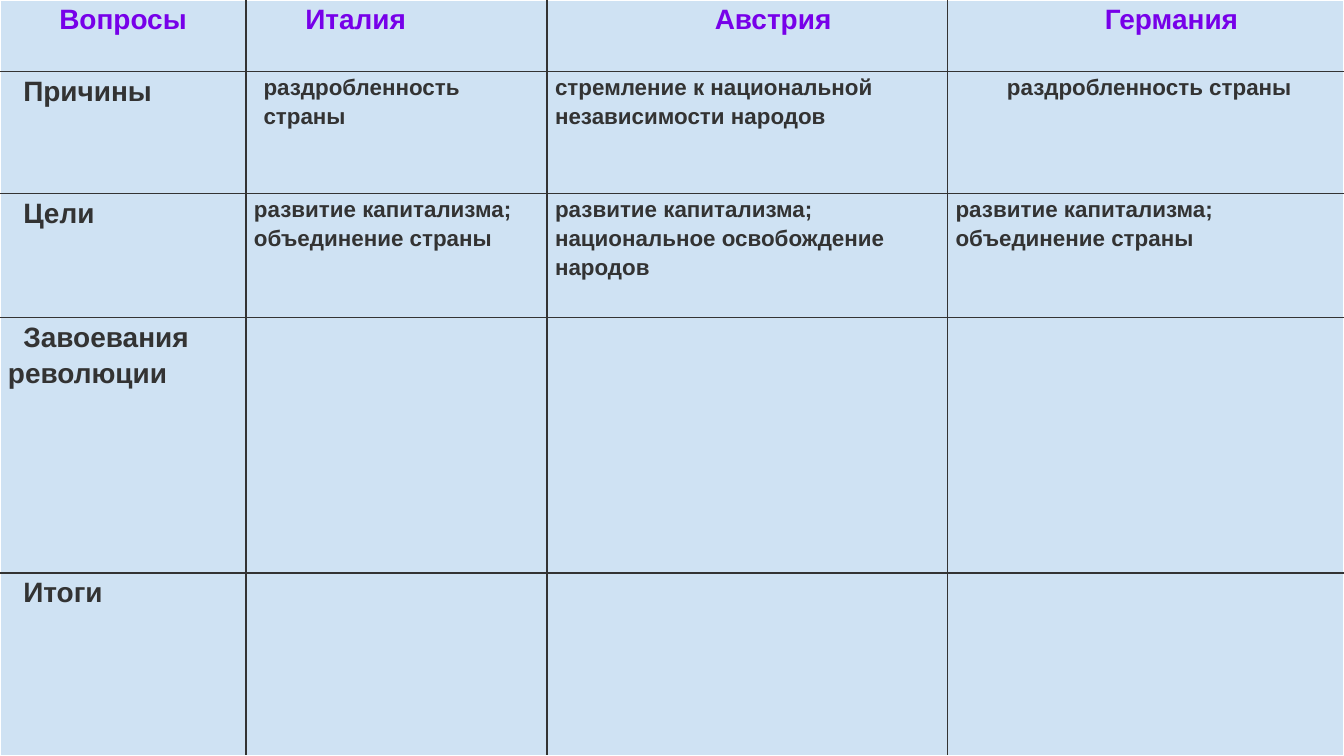
from lxml import etree
from pptx import Presentation
from pptx.dml.color import RGBColor
from pptx.enum.text import PP_ALIGN
from pptx.oxml.ns import qn
from pptx.util import Cm, Pt

LEFT, CENTER = PP_ALIGN.LEFT, PP_ALIGN.CENTER

THEME = {
    "font": "Arial", "heading_size": 15, "body_size": 12, "spacing": 1.15,
    "heading": "7700E9", "text": "333333", "fill": "CFE2F3",
    "inner_line": "333333", "outer_line": "FFFFFF", "line_width": 1,
}
SLIDE_SIZE = (25.4, 14.29)
COLUMN_WIDTHS = (4.65, 5.69, 7.57, 7.49)
ROW_HEIGHTS = (1.35, 2.31, 2.34, 4.83, 3.46)
SIDE_INSET = 0.15
LABEL_INDENT = 0.29

COUNTRIES = [
    ("Вопросы", {"align": CENTER}),
    ("Италия", {"margin": 0.97}),
    ("Австрия", {"align": CENTER, "margin": 0.97}),
    ("Германия", {"align": CENTER, "margin": 0.97}),
]
QUESTIONS = ["Причины", "Цели", "Завоевания революции", "Итоги"]
ANSWERS = [
    [
        (["раздробленность страны"], {"margin": 0.18}),
        (["стремление к национальной независимости народов"], {}),
        (["раздробленность страны"], {"margin": 0.97}),
    ],
    [
        (["развитие капитализма;", "объединение страны"], {}),
        (["развитие капитализма;", "национальное освобождение народов"], {}),
        (["развитие капитализма;", "объединение страны"], {}),
    ],
]


def write(cell, lines, size=THEME["body_size"], color=THEME["text"],
          align=LEFT, margin=0, indent=0):
    """Fill a cell with bold paragraphs in the given format."""
    frame = cell.text_frame
    for index, line in enumerate(lines):
        para = frame.add_paragraph() if index else frame.paragraphs[0]
        properties = para._p.get_or_add_pPr()
        properties.set("marL", str(Cm(margin)))
        properties.set("indent", str(Cm(indent)))
        para.alignment = align
        para.line_spacing = THEME["spacing"]
        span = para.add_run()
        span.text = line
        span.font.name = THEME["font"]
        span.font.size = Pt(size)
        span.font.bold = True
        span.font.color.rgb = RGBColor.from_string(color)


def set_borders(cell, outer_sides):
    """Draw the four borders of a cell, light where they face outwards."""
    properties = cell._tc.get_or_add_tcPr()
    for index, side in enumerate("LRTB"):
        color = THEME["outer_line" if side in outer_sides else "inner_line"]
        line = etree.Element(qn(f"a:ln{side}"), w=str(Pt(THEME["line_width"])))
        fill = etree.SubElement(line, qn("a:solidFill"))
        etree.SubElement(fill, qn("a:srgbClr"), val=color)
        properties.insert(index, line)


def style_cell(cell, row, column):
    """Set the fill, insets and borders of one cell."""
    cell.fill.solid()
    cell.fill.fore_color.rgb = RGBColor.from_string(THEME["fill"])
    cell.margin_left = cell.margin_right = Cm(SIDE_INSET)
    cell.margin_top = cell.margin_bottom = 0
    edges = {
        "L": column == 0, "R": column == len(COLUMN_WIDTHS) - 1,
        "T": row == 0, "B": row == len(ROW_HEIGHTS) - 1,
    }
    set_borders(cell, [side for side, outer in edges.items() if outer])


def add_grid(page):
    """Add the empty styled table to the page."""
    table = page.shapes.add_table(
        len(ROW_HEIGHTS), len(COLUMN_WIDTHS), 0, 0,
        Cm(sum(COLUMN_WIDTHS)), Cm(sum(ROW_HEIGHTS))).table
    table.horz_banding = False
    table.first_row = False
    for column, width in zip(table.columns, COLUMN_WIDTHS):
        column.width = Cm(width)
    for row, height in zip(table.rows, ROW_HEIGHTS):
        row.height = Cm(height)
    for row in range(len(ROW_HEIGHTS)):
        for column in range(len(COLUMN_WIDTHS)):
            style_cell(table.cell(row, column), row, column)
    return table


def main():
    """Build the comparison table and save the deck."""
    deck = Presentation()
    deck.slide_width, deck.slide_height = map(Cm, SLIDE_SIZE)
    page = deck.slides.add_slide(deck.slide_layouts[6])
    table = add_grid(page)
    for column, (name, layout) in enumerate(COUNTRIES):
        write(table.cell(0, column), [name], size=THEME["heading_size"],
              color=THEME["heading"], **layout)
    for row, question in enumerate(QUESTIONS, 1):
        write(table.cell(row, 0), [question], size=THEME["heading_size"],
              indent=LABEL_INDENT)
    for row, answers in enumerate(ANSWERS, 1):
        for column, (lines, layout) in enumerate(answers, 1):
            write(table.cell(row, column), lines, **layout)
    deck.save("out.pptx")


if __name__ == "__main__":
    main()
